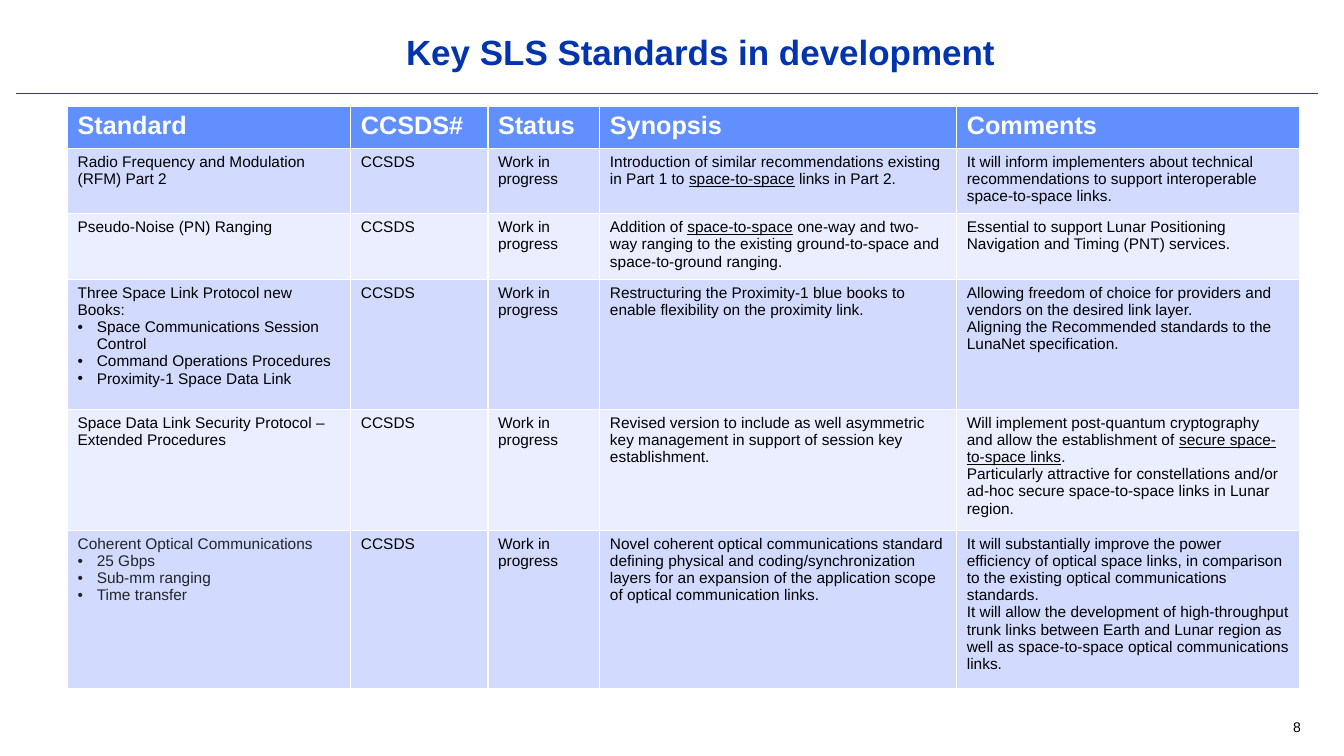
from lxml import etree
from pptx import Presentation
from pptx.dml.color import RGBColor
from pptx.enum.shapes import MSO_CONNECTOR
from pptx.enum.text import MSO_ANCHOR, PP_ALIGN
from pptx.oxml.ns import qn
from pptx.util import Inches, Pt

# Content: "_" encloses underlined words, "• " starts a bullet
TITLE = "Key SLS Standards in development"
PAGE = "8"
HEADERS = ["Standard", "CCSDS#", "Status", "Synopsis", "Comments"]
NUMBER, STATUS = "CCSDS", "Work in progress"
STANDARDS = [  # standard, synopsis, comments
    (["Radio Frequency and Modulation (RFM) Part 2"],
     ["Introduction of similar recommendations existing in Part 1 to "
      "_space-to-space_ links in Part 2."],
     ["It will inform implementers about technical recommendations to support "
      "interoperable space-to-space links."]),
    (["Pseudo-Noise (PN) Ranging"],
     ["Addition of _space-to-space_ one-way and two-way ranging to the existing "
      "ground-to-space and space-to-ground ranging."],
     ["Essential to support Lunar Positioning Navigation and Timing (PNT) services."]),
    (["Three Space Link Protocol new Books:",
      "• Space Communications Session Control",
      "• Command Operations Procedures",
      "• Proximity-1 Space Data Link"],
     ["Restructuring the Proximity-1 blue books to enable flexibility on the "
      "proximity link."],
     ["Allowing freedom of choice for providers and vendors on the desired link layer.",
      "Aligning the Recommended standards to the LunaNet specification."]),
    (["Space Data Link Security Protocol – Extended Procedures"],
     ["Revised version to include as well asymmetric key management in support of "
      "session key establishment."],
     ["Will implement post-quantum cryptography and allow the establishment of "
      "_secure space-to-space links_.",
      "Particularly attractive for constellations and/or ad-hoc secure "
      "space-to-space links in Lunar region."]),
    (["Coherent Optical Communications",
      "• 25 Gbps", "• Sub-mm ranging", "• Time transfer"],
     ["Novel coherent optical communications standard defining physical and "
      "coding/synchronization layers for an expansion of the application scope of "
      "optical communication links."],
     ["It will substantially improve the power efficiency of optical space links, in "
      "comparison to the existing optical communications standards.",
      "It will allow the development of high-throughput trunk links between Earth and "
      "Lunar region as well as space-to-space optical communications links."]),
]

# Layout in inches
COLUMNS = [2.81, 1.36, 1.11, 3.54, 3.4]
ROWS = [0.41, 0.61, 0.61, 1.29, 1.12, 1.46]
TABLE_LEFT, TABLE_TOP = 0.67, 1.06
BULLET_INDENT = Inches(0.19)

FONT = "Arial"
TITLE_BLUE = RGBColor(0x02, 0x34, 0xAD)
RULE_BLUE = RGBColor(0x33, 0x33, 0x99)
HEADER_BLUE = RGBColor(0x61, 0x8F, 0xFD)
BANDS = [RGBColor(0xD2, 0xDB, 0xFE), RGBColor(0xEA, 0xEE, 0xFF)]
WHITE = RGBColor(0xFF, 0xFF, 0xFF)
BLACK = RGBColor(0, 0, 0)
CHARCOAL = RGBColor(0x21, 0x25, 0x29)
LEFT, CENTER, RIGHT = PP_ALIGN.LEFT, PP_ALIGN.CENTER, PP_ALIGN.RIGHT
TOP = MSO_ANCHOR.TOP
STRAIGHT = MSO_CONNECTOR.STRAIGHT


def write(frame, lines, size, color, bold=False, align=LEFT):
    for index, line in enumerate(lines):
        paragraph = frame.paragraphs[0] if index == 0 else frame.add_paragraph()
        paragraph.alignment = align
        if line.startswith("• "):
            line = line[2:]
            properties = paragraph._p.get_or_add_pPr()
            properties.set("marL", str(BULLET_INDENT))
            properties.set("indent", str(-BULLET_INDENT))
            etree.SubElement(properties, qn("a:buFont")).set("typeface", FONT)
            etree.SubElement(properties, qn("a:buChar")).set("char", "•")
        font = paragraph.font
        font.name, font.size, font.bold = FONT, Pt(size), bold
        font.color.rgb = color
        for part, words in enumerate(line.split("_")):
            run = paragraph.add_run()
            run.text = words
            if part % 2:
                run.font.underline = True


def add_text(slide, box, line, size, color, bold, align):
    frame = slide.shapes.add_textbox(*map(Inches, box)).text_frame
    frame.word_wrap = True
    frame.vertical_anchor = TOP
    write(frame, [line], size, color, bold, align)
    return frame


def fill_cell(cell, lines, background, size, color, bold=False):
    cell.fill.solid()
    cell.fill.fore_color.rgb = background
    write(cell.text_frame, lines, size, color, bold)


def main():
    deck = Presentation()
    deck.slide_width, deck.slide_height = Inches(13.33), Inches(7.5)
    slide = deck.slides.add_slide(deck.slide_layouts[6])

    # Rule under the title
    rule = slide.shapes.add_connector(
        STRAIGHT, Inches(0.16), Inches(0.92), Inches(13.07), Inches(0.92))
    rule.line.color.rgb = RULE_BLUE
    rule.line.width = Pt(0.13)
    etree.SubElement(rule._element.spPr, qn("a:effectLst"))

    # Title and page number
    title = add_text(slide, (1.22, 0.3, 11.45, 0.62), TITLE, 25, TITLE_BLUE, True, CENTER)
    title.paragraphs[0].line_spacing = 0.9
    add_text(slide, (9.89, 7.08, 3.11, 0.25), PAGE, 10, BLACK, False, RIGHT)

    # Table of standards
    table = slide.shapes.add_table(
        len(ROWS), len(COLUMNS), Inches(TABLE_LEFT), Inches(TABLE_TOP),
        Inches(sum(COLUMNS)), Inches(sum(ROWS))).table
    for column, width in zip(table.columns, COLUMNS):
        column.width = Inches(width)
    for row, height in zip(table.rows, ROWS):
        row.height = Inches(height)

    for column, header in enumerate(HEADERS):
        fill_cell(table.cell(0, column), [header], HEADER_BLUE, 18, WHITE, True)
    for row, (standard, synopsis, comments) in enumerate(STANDARDS, 1):
        band = BANDS[(row - 1) % 2]
        entries = [standard, [NUMBER], [STATUS], synopsis, comments]
        for column, lines in enumerate(entries):
            last_standard = row == len(STANDARDS) and column == 0
            color = CHARCOAL if last_standard else BLACK
            fill_cell(table.cell(row, column), lines, band, 11, color)

    deck.save("out.pptx")


if __name__ == "__main__":
    main()
